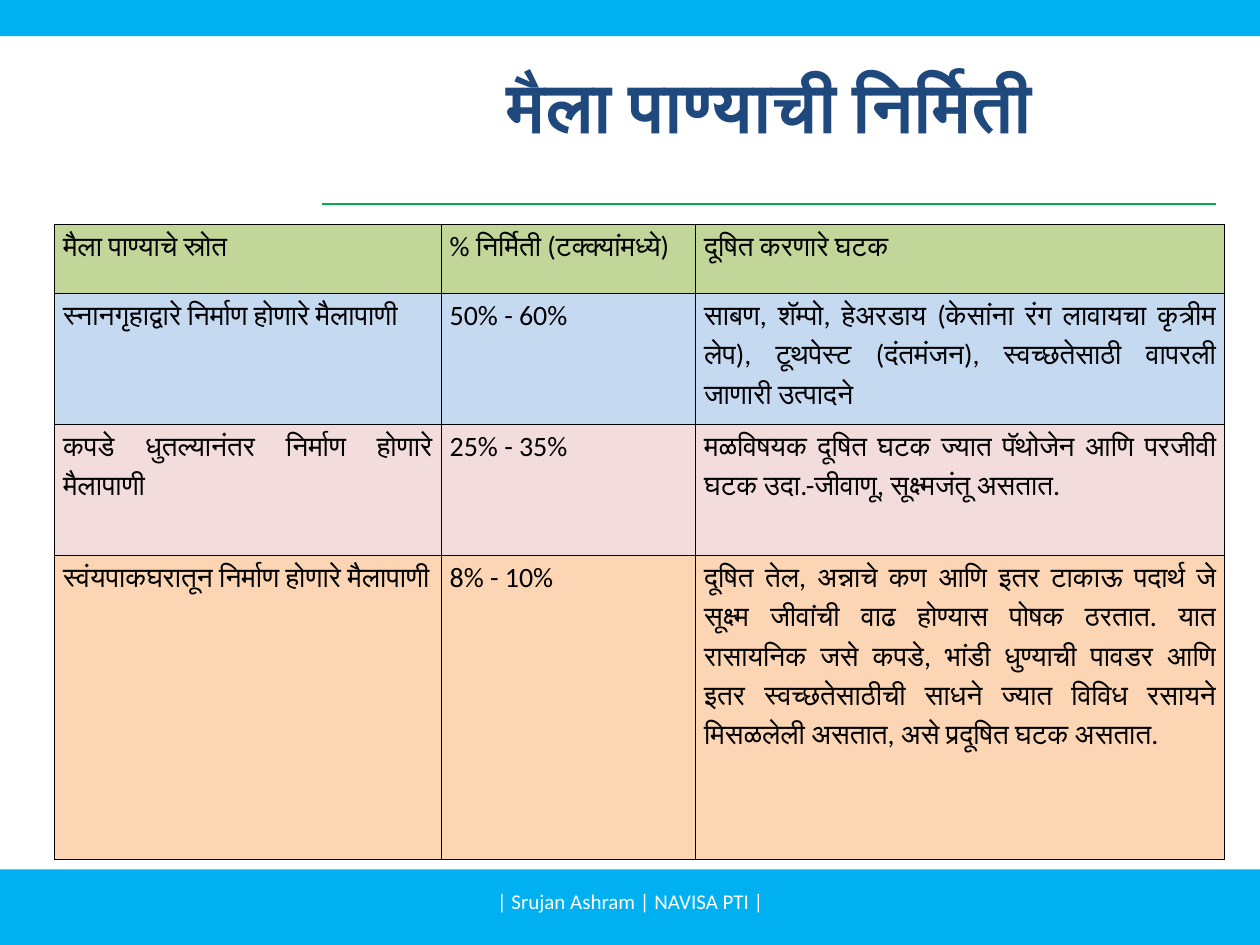
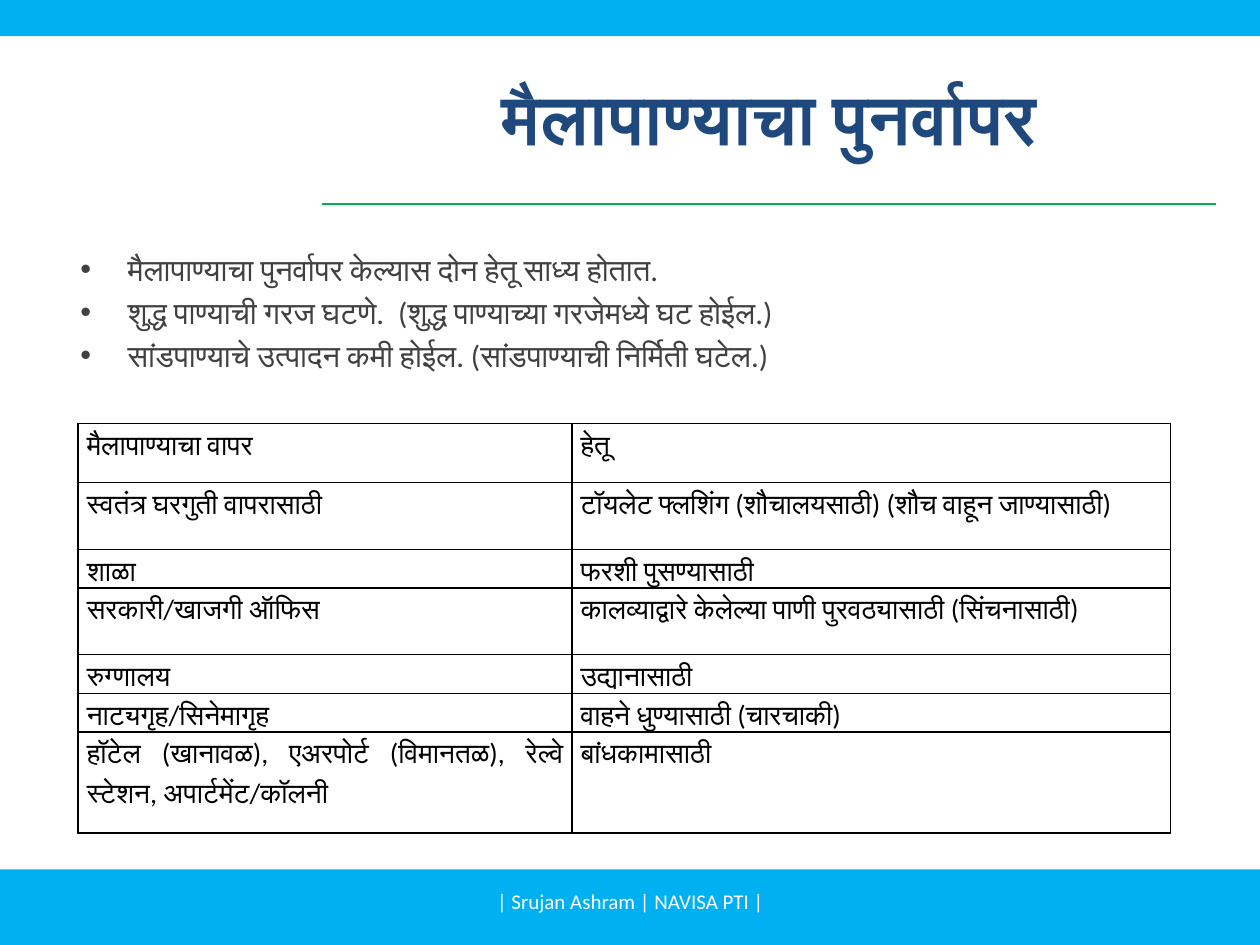
import pptx
import pptx.util
import pptx.dml.color
import pptx.enum.shapes
import pptx.enum.text
import pptx.oxml.ns
from lxml import etree

Pt = pptx.util.Pt
qn = pptx.oxml.ns.qn
ALIGN = pptx.enum.text.PP_ALIGN
ANCHOR = pptx.enum.text.MSO_ANCHOR

FONT = "Calibri"
COLORS = {
    "band": "00B0F0", "rule": "00B050", "title": "1F497D", "body": "404040",
    "text": "000000", "footer": "FFFFFF", "header_row": "C2D69A",
    "bath_row": "C5D9F1", "laundry_row": "F2DDDC", "kitchen_row": "FCD5B4",
}
FOOTER = "| Srujan Ashram | NAVISA PTI |"

SOURCES = [
    ["मैला पाण्याचे स्रोत", "% निर्मिती (टक्क्यांमध्ये)", "दूषित करणारे घटक"],
    ["स्नानगृहाद्वारे निर्माण होणारे मैलापाणी", "50% - 60%",
     "साबण, शॅम्पो, हेअरडाय (केसांना रंग लावायचा कृत्रीम लेप), टूथपेस्ट "
     "(दंतमंजन), स्वच्छतेसाठी वापरली जाणारी उत्पादने"],
    ["कपडे धुतल्यानंतर निर्माण होणारे मैलापाणी", "25% - 35%",
     "मळविषयक दूषित घटक ज्यात पॅथोजेन आणि परजीवी घटक उदा.-जीवाणू, "
     "सूक्ष्मजंतू असतात."],
    ["स्वंयपाकघरातून निर्माण होणारे मैलापाणी", "8% - 10%",
     "दूषित तेल, अन्नाचे कण आणि इतर टाकाऊ पदार्थ जे सूक्ष्म जीवांची वाढ "
     "होण्यास पोषक ठरतात. यात रासायनिक जसे कपडे, भांडी धुण्याची पावडर आणि "
     "इतर स्वच्छतेसाठीची साधने ज्यात विविध रसायने मिसळलेली असतात, असे "
     "प्रदूषित घटक असतात."],
]
SOURCE_FILLS = ["header_row", "bath_row", "laundry_row", "kitchen_row"]

BENEFITS = [
    "मैलापाण्याचा पुनर्वापर केल्यास दोन हेतू साध्य होतात.",
    "शुद्ध पाण्याची गरज घटणे.  (शुद्ध पाण्याच्या गरजेमध्ये घट होईल.)",
    "सांडपाण्याचे उत्पादन कमी होईल. (सांडपाण्याची निर्मिती घटेल.)",
]

USES = [
    ["मैलापाण्याचा वापर", "हेतू"],
    ["स्वतंत्र घरगुती वापरासाठी",
     "टॉयलेट फ्लशिंग (शौचालयसाठी) (शौच वाहून जाण्यासाठी)"],
    ["शाळा", "फरशी पुसण्यासाठी"],
    ["सरकारी/खाजगी ऑफिस",
     "कालव्याद्वारे केलेल्या पाणी पुरवठ्यासाठी (सिंचनासाठी)"],
    ["रुग्णालय", "उद्यानासाठी"],
    ["नाट्यगृह/सिनेमागृह", "वाहने धुण्यासाठी (चारचाकी)"],
    ["हॉटेल (खानावळ), एअरपोर्ट (विमानतळ), रेल्वे स्टेशन, अपार्टमेंट/कॉलनी",
     "बांधकामासाठी"],
]


def rgb(name):
    return pptx.dml.color.RGBColor.from_string(COLORS[name])


def add_run(paragraph, text, size, color, bold=False):
    run = paragraph.add_run()
    run.text = text
    run.font.size = Pt(size)
    run.font.name = FONT
    run.font.bold = bold
    run.font.color.rgb = rgb(color)
    etree.SubElement(run.font._element, qn("a:cs"), typeface=FONT)


def add_text_box(slide, left, top, width, height, anchor):
    box = slide.shapes.add_textbox(Pt(left), Pt(top), Pt(width), Pt(height))
    box.text_frame.word_wrap = True
    box.text_frame.vertical_anchor = anchor
    return box.text_frame


def add_band(slide, top, height):
    band = slide.shapes.add_shape(
        pptx.enum.shapes.MSO_SHAPE.RECTANGLE, 0, Pt(top), Pt(720), Pt(height))
    band.shadow.inherit = False
    band.fill.solid()
    band.fill.fore_color.rgb = rgb("band")
    band.line.fill.background()


def add_title_rule(slide):
    rule = slide.shapes.add_connector(
        pptx.enum.shapes.MSO_CONNECTOR.STRAIGHT,
        Pt(184.3), Pt(116.6), Pt(694.8), Pt(116.6))
    rule.line.color.rgb = rgb("rule")
    rule.line.width = Pt(0.75)
    etree.SubElement(rule._element.spPr, qn("a:effectLst"))


def add_centered_text(slide, text, area, size, color, bold=False):
    paragraph = add_text_box(slide, *area, ANCHOR.MIDDLE).paragraphs[0]
    paragraph.alignment = ALIGN.CENTER
    add_run(paragraph, text, size, color, bold)
    return paragraph


def add_title(slide, text, top, height, trailing_break=False):
    area = (184.3, top, 510.5, height)
    paragraph = add_centered_text(slide, text, area, 40, "title", True)
    if trailing_break:
        paragraph.add_line_break()
        etree.SubElement(paragraph._p, qn("a:endParaRPr"), sz="4000", b="1")


def add_bullets(slide, items, left, top, width, height):
    frame = add_text_box(slide, left, top, width, height, ANCHOR.TOP)
    for index, item in enumerate(items):
        paragraph = frame.add_paragraph() if index else frame.paragraphs[0]
        if index:
            paragraph.space_before = Pt(3.5)
        properties = paragraph._p.get_or_add_pPr()
        properties.set("marL", str(Pt(27)))
        properties.set("indent", str(-Pt(27)))
        etree.SubElement(properties, qn("a:buFont"), typeface="Arial")
        etree.SubElement(properties, qn("a:buChar"), char="•")
        add_run(paragraph, item, 17.6, "body")


def set_borders(cell, width):
    properties = cell._tc.get_or_add_tcPr()
    for index, side in enumerate(("lnL", "lnR", "lnT", "lnB")):
        line = etree.Element(qn("a:" + side), w=str(Pt(width)))
        fill = etree.SubElement(line, qn("a:solidFill"))
        etree.SubElement(fill, qn("a:srgbClr"), val=COLORS["text"])
        properties.insert(index, line)


def fill_cell(cell, text, fill, border):
    cell.margin_left = cell.margin_right = Pt(5)
    cell.margin_top = cell.margin_bottom = 0
    if fill:
        cell.fill.solid()
        cell.fill.fore_color.rgb = rgb(fill)
    else:
        cell.fill.background()
    set_borders(cell, border)
    paragraph = cell.text_frame.paragraphs[0]
    paragraph.alignment = ALIGN.JUSTIFY
    paragraph.line_spacing = 1.15
    paragraph.space_after = Pt(10)
    add_run(paragraph, text, 16, "text")


def add_grid(slide, rows, left, top, widths, heights, border, fills=None):
    table = slide.shapes.add_table(
        len(rows), len(widths), Pt(left), Pt(top),
        Pt(sum(widths)), Pt(sum(heights))).table
    table.first_row = table.horz_banding = False
    for column, width in zip(table.columns, widths):
        column.width = Pt(width)
    for index, (row, height) in enumerate(zip(table.rows, heights)):
        row.height = Pt(height)
        for cell, text in zip(row.cells, rows[index]):
            fill_cell(cell, text, fills[index] if fills else None, border)


def add_base_slide(presentation):
    slide = presentation.slides.add_slide(presentation.slide_layouts[6])
    add_band(slide, 496.8, 43.2)
    add_title_rule(slide)
    add_band(slide, 0, 20.6)
    add_centered_text(slide, FOOTER, (246.2, 500.4, 228.2, 28.8), 12, "footer")
    return slide


def main():
    presentation = pptx.Presentation()
    presentation.slide_width = Pt(720)
    presentation.slide_height = Pt(540)

    generation = add_base_slide(presentation)
    add_title(generation, "मैला पाण्याची निर्मिती", 56.2, 54.7, True)
    add_grid(generation, SOURCES, 31, 128.2, [221, 145.4, 302.4],
             [39.6, 74.9, 74.9, 173.5], 0.5, SOURCE_FILLS)

    reuse = add_base_slide(presentation)
    add_title(reuse, "मैलापाण्याचा पुनर्वापर", 21.6, 90)
    add_bullets(reuse, BENEFITS, 38.9, 139.7, 585.4, 74.2)
    add_grid(reuse, USES, 44.6, 241.9, [282.2, 342],
             [33.8, 38.2, 18.7, 38.2, 18.7, 18.7, 57.6], 1)

    presentation.save("out.pptx")


if __name__ == "__main__":
    main()
